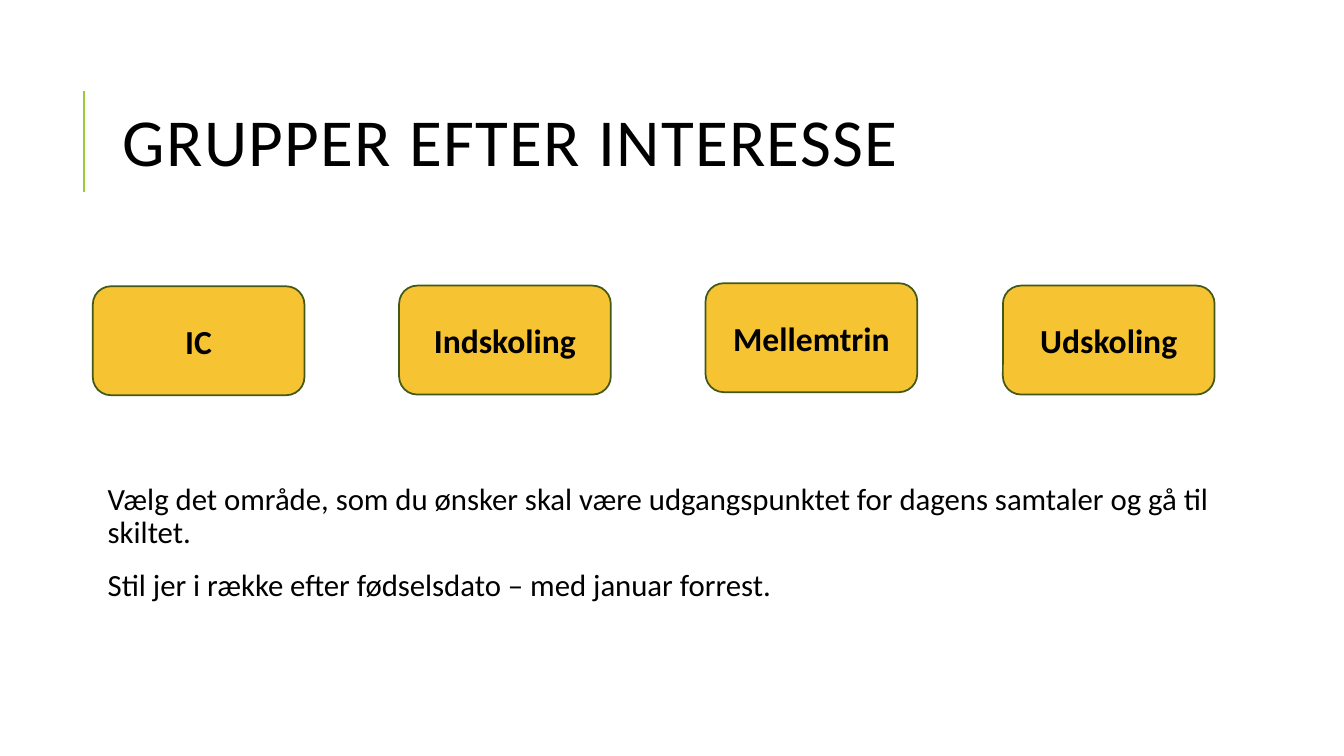
from dataclasses import dataclass

from lxml import etree
from pptx import Presentation
from pptx import slide as sl
from pptx import util as u
from pptx.dml import color
from pptx.enum import shapes, text
from pptx.oxml import ns
from pptx.text import text as tx

BLACK = color.RGBColor(0x00, 0x00, 0x00)
GREEN = color.RGBColor(0x99, 0xCB, 0x38)
DARK_GREEN = color.RGBColor(0x43, 0x59, 0x19)
YELLOW = color.RGBColor(0xF6, 0xC3, 0x32)
FONT = "Calibri"
SIGN_WIDTH, SIGN_HEIGHT = 151.2, 77.8


@dataclass(frozen=True)
class Sign:
    label: str
    left: float
    top: float


SIGNS = [
    Sign("IC", 66.3, 204.5),
    Sign("Indskoling", 285.1, 204),
    Sign("Mellemtrin", 504, 202.3),
    Sign("Udskoling", 716.4, 204),
]
INSTRUCTIONS = [
    "Vælg det område, som du ønsker skal være udgangspunktet for dagens samtaler og gå til skiltet.",
    "Stil jer i række efter fødselsdato – med januar forrest.",
]


def add_run(paragraph: tx._Paragraph, words: str, size: float, bold: bool = False) -> tx._Run:
    run = paragraph.add_run()
    run.text = words
    run.font.name = FONT
    run.font.size = u.Pt(size)
    run.font.bold = bold
    run.font.color.rgb = BLACK
    return run


def add_accent_line(slide: sl.Slide) -> None:
    line = slide.shapes.add_connector(
        shapes.MSO_CONNECTOR.STRAIGHT, u.Pt(60), u.Pt(137), u.Pt(60), u.Pt(65)
    )
    line.line.color.rgb = GREEN
    line.line.width = u.Pt(1.5)
    etree.SubElement(line._element.spPr, ns.qn("a:effectLst"))


def format_title(slide: sl.Slide) -> None:
    title = slide.shapes.title
    title.left, title.top = u.Pt(80.6), u.Pt(46.1)
    title.width, title.height = u.Pt(765.4), u.Pt(118.1)
    frame = title.text_frame
    frame.word_wrap = True
    frame.auto_size = text.MSO_AUTO_SIZE.NONE
    frame.vertical_anchor = text.MSO_ANCHOR.MIDDLE
    paragraph = frame.paragraphs[0]
    paragraph.alignment = text.PP_ALIGN.LEFT
    paragraph.line_spacing = 0.8
    run = add_run(paragraph, "GRUPPER EFTER INTERESSE", 48)
    run.font._element.set("spc", "100")


def add_instructions(slide: sl.Slide) -> None:
    shape = slide.shapes.add_textbox(u.Pt(66.2), u.Pt(342), u.Pt(828), u.Pt(144.7))
    frame = shape.text_frame
    frame.word_wrap = True
    frame.margin_left = u.Pt(10.8)
    frame.margin_top = frame.margin_right = frame.margin_bottom = u.Pt(3.6)
    for index, words in enumerate(INSTRUCTIONS):
        paragraph = frame.add_paragraph() if index else frame.paragraphs[0]
        paragraph.line_spacing = 0.9
        paragraph.space_before = u.Pt(12)
        paragraph.space_after = u.Pt(2)
        add_run(paragraph, words, 22)


def add_sign(slide: sl.Slide, sign: Sign) -> None:
    shape = slide.shapes.add_shape(
        shapes.MSO_SHAPE.ROUNDED_RECTANGLE,
        u.Pt(sign.left), u.Pt(sign.top), u.Pt(SIGN_WIDTH), u.Pt(SIGN_HEIGHT),
    )
    shape.shadow.inherit = False
    shape.fill.solid()
    shape.fill.fore_color.rgb = YELLOW
    shape.line.color.rgb = DARK_GREEN
    shape.line.width = u.Pt(1.25)
    shape.text_frame.vertical_anchor = text.MSO_ANCHOR.MIDDLE
    paragraph = shape.text_frame.paragraphs[0]
    paragraph.alignment = text.PP_ALIGN.CENTER
    add_run(paragraph, sign.label, 24, bold=True)


def main() -> None:
    presentation = Presentation()
    presentation.slide_width, presentation.slide_height = u.Pt(960), u.Pt(540)
    slide = presentation.slides.add_slide(presentation.slide_layouts.get_by_name("Title Only"))
    add_accent_line(slide)
    format_title(slide)
    add_instructions(slide)
    for sign in SIGNS:
        add_sign(slide, sign)
    presentation.save("out.pptx")


if __name__ == "__main__":
    main()
